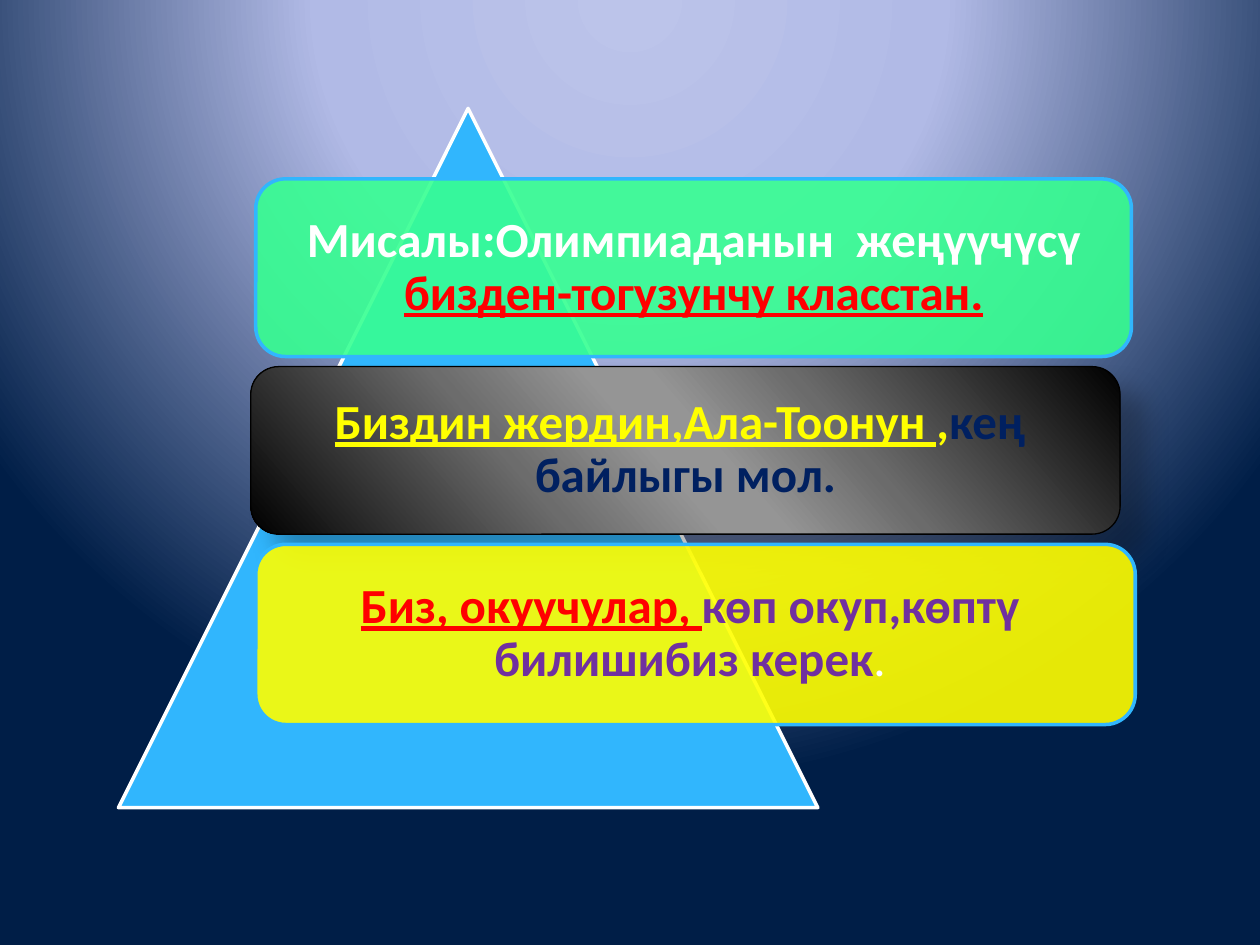
from pptx import Presentation
from pptx.dml.color import RGBColor
from pptx.enum.shapes import MSO_SHAPE as SHAPE
from pptx.enum.text import MSO_ANCHOR as ANCHOR, PP_ALIGN as ALIGN
from pptx.oxml import parse_xml
from pptx.oxml.ns import nsdecls, qn
from pptx.util import Inches, Pt
from lxml.etree import SubElement

WHITE = RGBColor(0xFF, 0xFF, 0xFF)
BLACK = RGBColor(0x00, 0x00, 0x00)
SKY = RGBColor(0x31, 0xB6, 0xFD)
GREEN = RGBColor(0x37, 0xFF, 0x92)
YELLOW = RGBColor(0xFF, 0xFF, 0x00)
RED = RGBColor(0xFF, 0x00, 0x00)
NAVY = RGBColor(0x00, 0x20, 0x60)
PURPLE = RGBColor(0x70, 0x30, 0xA0)
PERIWINKLE = RGBColor(0xBC, 0xC4, 0xEA)
LAVENDER = RGBColor(0xB1, 0xBA, 0xE6)
MIDNIGHT = RGBColor(0x00, 0x1E, 0x47)
DARK_GREY = RGBColor(0x6B, 0x6B, 0x6B)
MID_GREY = RGBColor(0x6C, 0x6C, 0x6C)
LIGHT_GREY = RGBColor(0x95, 0x95, 0x95)

GLOW = [(0, PERIWINKLE), (40, LAVENDER), (100, MIDNIGHT)]
METAL = [(0, BLACK), (33, DARK_GREY), (47, LIGHT_GREY),
         (53, LIGHT_GREY), (68, MID_GREY), (100, BLACK)]
RADIAL = ('<a:path path="circle"><a:fillToRect l="50000" t="-80000" '
          'r="50000" b="180000"/></a:path>')
DIAGONAL = f'<a:lin ang="{139 * 60000}" scaled="0"/>'

W, H = Inches(10), Inches(7.5)


def share(left, top, width, height):
    return [round(v * side / 100)
            for v, side in ((left, W), (top, H), (width, W), (height, H))]


def set_gradient(fill, parent, stops, direction):
    fill.gradient()
    old = parent.find(qn("a:gradFill"))
    marks = "".join(f'<a:gs pos="{pos * 1000}"><a:srgbClr val="{color}"/></a:gs>'
                    for pos, color in stops)
    parent.replace(old, parse_xml(
        f'<a:gradFill {nsdecls("a")} rotWithShape="1">'
        f'<a:gsLst>{marks}</a:gsLst>{direction}</a:gradFill>'))


def set_alpha(sp, percent):
    color = sp._element.spPr.find(qn("a:solidFill")).find(qn("a:srgbClr"))
    SubElement(color, qn("a:alpha"), val=str(percent * 1000))


def add_shadow(sp):
    effects = sp._element.spPr.find(qn("a:effectLst"))
    shadow = SubElement(effects, qn("a:outerShdw"), blurRad=str(Pt(15)),
                        dist=str(Pt(18)), dir=str(45 * 60000),
                        algn="tl", rotWithShape="0")
    color = SubElement(shadow, qn("a:srgbClr"), val=str(BLACK))
    SubElement(color, qn("a:alpha"), val="26000")


def add_text(p, text, color=WHITE, size=28, bold=True, underline=False):
    r = p.add_run()
    r.text = text
    r.font.name = "Calibri"
    r.font.size = Pt(size)
    r.font.bold = bold
    r.font.underline = underline
    r.font.color.rgb = color


def outlined_shape(s, kind, box, line, width):
    sp = s.shapes.add_shape(kind, *box)
    sp.shadow.inherit = False
    sp.line.color.rgb = line
    sp.line.width = Pt(width)
    return sp


def draw_background(s):
    fill = s.background.fill
    fill.solid()
    bg = next(s._element.iter(qn("p:bgPr")))
    set_gradient(fill, bg, GLOW, RADIAL)


def draw_pyramid(s, box):
    sp = outlined_shape(s, SHAPE.ISOSCELES_TRIANGLE, box, WHITE, 2)
    sp.fill.solid()
    sp.fill.fore_color.rgb = SKY


def draw_card(s, box, runs, color=None):
    sp = outlined_shape(s, SHAPE.ROUNDED_RECTANGLE, box,
                        SKY if color else BLACK, 2 if color else 0.75)
    if color:
        sp.fill.solid()
        sp.fill.fore_color.rgb = color
        set_alpha(sp, 90)
    else:
        set_gradient(sp.fill, sp._element.spPr, METAL, DIAGONAL)
        add_shadow(sp)
    tf = sp.text_frame
    tf.word_wrap = True
    tf.vertical_anchor = ANCHOR.MIDDLE
    tf.margin_left = tf.margin_right = Inches(0.12)
    tf.margin_top = tf.margin_bottom = Inches(0.12)
    p = tf.paragraphs[0]
    p.alignment = ALIGN.CENTER
    p.line_spacing = 0.9
    for text, style in runs:
        add_text(p, text, **style)


def main():
    prs = Presentation()
    prs.slide_width, prs.slide_height = W, H
    s = prs.slides.add_slide(prs.slide_layouts[6])
    draw_background(s)
    draw_pyramid(s, share(9.4, 11.47, 55.5, 74))
    draw_card(s, share(20.3, 18.93, 69.5, 18.8), [
        ("Мисалы:Олимпиаданын  жеңүүчүсү ", {}),
        ("бизден-тогузунчу класстан.", dict(color=RED, underline=True)),
    ], GREEN)
    draw_card(s, share(19.9, 38.8, 69, 17.73), [
        ("Биздин жердин,Ала-Тоонун ", dict(color=YELLOW, underline=True)),
        (",", dict(color=YELLOW)),
        ("кең  байлыгы мол.", dict(color=NAVY)),
    ])
    draw_card(s, share(20.3, 57.6, 69.8, 19.07), [
        ("Биз, окуучулар, ", dict(color=RED, underline=True)),
        ("көп окуп,көптү  билишибиз керек", dict(color=PURPLE)),
        (". ", dict(bold=False)),
    ], YELLOW)
    prs.save("out.pptx")


if __name__ == "__main__":
    main()
